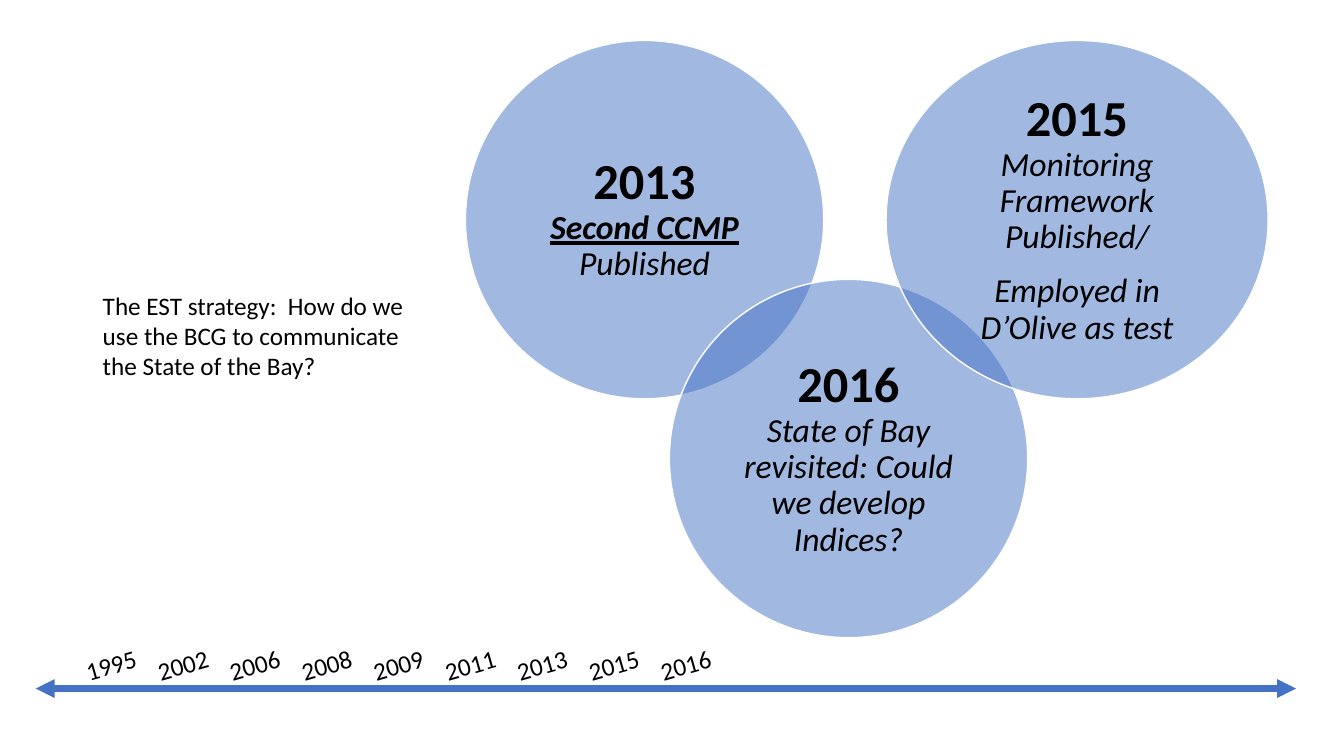
import pptx
import pptx.dml.color
import pptx.enum.shapes
import pptx.enum.text
import pptx.oxml.ns
import pptx.util
from lxml import etree

Cm, Pt = pptx.util.Cm, pptx.util.Pt
qn = pptx.oxml.ns.qn
ANCHOR = pptx.enum.text.MSO_ANCHOR
AUTO_SIZE = pptx.enum.text.MSO_AUTO_SIZE
CENTER = pptx.enum.text.PP_ALIGN.CENTER

YEAR = {"size": Pt(36), "bold": True}
DETAIL = {"size": Pt(24), "bold": False, "italic": True}
TITLE = {"size": Pt(24), "bold": True, "italic": True, "underline": True}
BODY = {"size": Pt(18)}

CIRCLE_SIZE = 9.03
# year, left, top, width, paragraphs of (text, format) below the year
CIRCLES = [
    ("2013", 11.73, 1.02, CIRCLE_SIZE,
     [[("Second CCMP ", TITLE), ("Published", DETAIL)]]),
    ("2016", 16.87, 7.04, CIRCLE_SIZE,
     [[("State of Bay revisited: Could we develop Indices?", DETAIL)]]),
    ("2015", 22.33, 1.02, 9.63,
     [[("Monitoring Framework Published/", DETAIL)],
      [("Employed in D’Olive as test", DETAIL)]]),
]
TIMELINE_YEARS = [1995, 2002, 2006, 2008, 2009, 2011, 2013, 2015, 2016]
YEAR_LEFT, YEAR_STEP = 1.9, 1.81


def rgb(value):
    return pptx.dml.color.RGBColor.from_string(value)


def apply(target, values):
    for name, value in values.items():
        setattr(target, name, value)


class Deck:
    font, text_color, accent, outline = "Calibri", "000000", "4472C4", "FFFFFF"

    def __init__(self, width, height):
        self.prs = pptx.Presentation()
        apply(self.prs, {"slide_width": Cm(width), "slide_height": Cm(height)})
        self.s = None

    def add_slide(self):
        self.s = self.prs.slides.add_slide(self.prs.slide_layouts[6])

    def run(self, p, text, values):
        r = p.add_run()
        r.text = text
        apply(r.font, {"name": self.font, **values})
        r.font.color.rgb = rgb(self.text_color)

    def circle(self, year, left, top, width, paragraphs):
        sp = self.s.shapes.add_shape(
            pptx.enum.shapes.MSO_SHAPE.OVAL,
            Cm(left), Cm(top), Cm(width), Cm(CIRCLE_SIZE))
        sp.shadow.inherit = False
        sp.fill.solid()
        sp.fill.fore_color.rgb = rgb(self.accent)
        color = sp.fill._xPr.find(qn("a:solidFill"))[0]
        etree.SubElement(color, qn("a:alpha"), val="50000")
        sp.line.color.rgb = rgb(self.outline)
        sp.line.width = Pt(1)

        tf = sp.text_frame
        margins = ("margin_left", "margin_top", "margin_right", "margin_bottom")
        apply(tf, {"word_wrap": True, "vertical_anchor": ANCHOR.MIDDLE,
                   **dict.fromkeys(margins, Cm(0.38))})
        for i, runs in enumerate(paragraphs):
            p = tf.add_paragraph() if i else tf.paragraphs[0]
            apply(p, {"alignment": CENTER, "line_spacing": 0.9,
                      "space_after": Pt(12.6)})
            if i == 0:
                self.run(p, year, YEAR)
                p.add_line_break()
            for text, values in runs:
                self.run(p, text, values)

    def text(self, text, left, top, width, height, rotation=0):
        sp = self.s.shapes.add_textbox(Cm(left), Cm(top), Cm(width), Cm(height))
        sp.rotation = rotation
        tf = sp.text_frame
        apply(tf, {"word_wrap": True, "auto_size": AUTO_SIZE.SHAPE_TO_FIT_TEXT})
        self.run(tf.paragraphs[0], text, BODY)

    def double_arrow(self, x1, x2, y):
        line = self.s.shapes.add_connector(
            pptx.enum.shapes.MSO_CONNECTOR.STRAIGHT,
            Cm(x1), Cm(y), Cm(x2), Cm(y))
        line.line.color.rgb = rgb(self.accent)
        line.line.width = Pt(4.5)
        ln = line.line._get_or_add_ln()
        for end in ("a:headEnd", "a:tailEnd"):
            etree.SubElement(ln, qn(end), type="triangle")
        etree.SubElement(line._element.spPr, qn("a:effectLst"))


def main():
    deck = Deck(33.87, 19.05)
    deck.add_slide()
    for circle in CIRCLES:
        deck.circle(*circle)
    deck.double_arrow(0.9, 32.66, 17.35)
    for i, year in enumerate(TIMELINE_YEARS):
        deck.text(str(year), YEAR_LEFT + i * YEAR_STEP, 16.2, 2.06, 1.03, 344.2)
    deck.text("The EST strategy:  How do we use the BCG to communicate "
              "the State of the Bay?", 2.34, 7.19, 8.43, 2.57)
    deck.prs.save("out.pptx")


if __name__ == "__main__":
    main()
